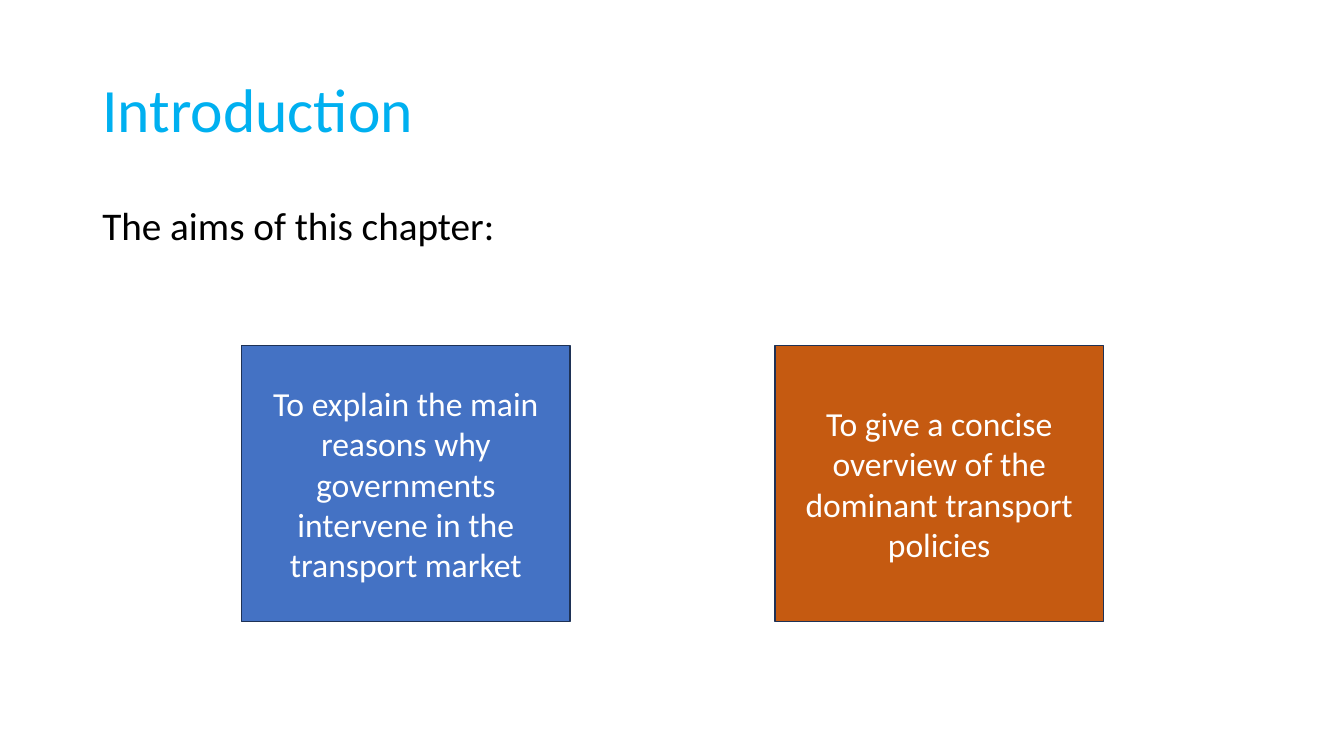
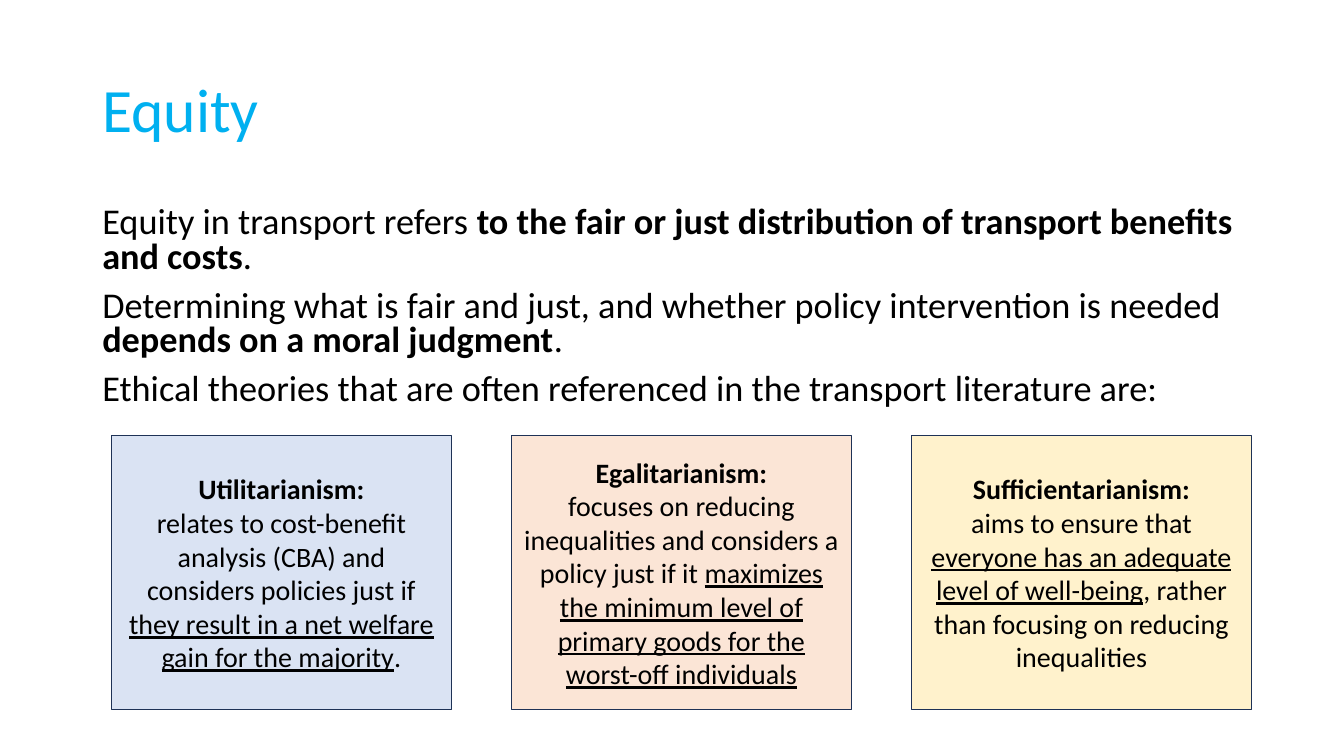
from pptx import Presentation
from pptx import util as u
from pptx.dml.color import RGBColor
from pptx.enum import shapes, text

EMU_PER_PX = 9525
FONT = "Calibri"
BLACK = RGBColor(0x00, 0x00, 0x00)
WHITE = RGBColor(0xFF, 0xFF, 0xFF)
SKY = RGBColor(0x00, 0xB0, 0xF0)
NAVY = RGBColor(0x1E, 0x32, 0x56)
BLUE = RGBColor(0x44, 0x72, 0xC4)
RUST = RGBColor(0xC5, 0x5A, 0x11)
PALE_BLUE = RGBColor(0xDA, 0xE3, 0xF3)
PALE_ORANGE = RGBColor(0xFB, 0xE5, 0xD6)
PALE_YELLOW = RGBColor(0xFF, 0xF2, 0xCC)

MARGIN, CONTENT_WIDTH = 88, 1104
BOLD, UNDERLINE = "bold", "underline"


def px(*lengths):
    return [u.Emu(length * EMU_PER_PX) for length in lengths]


class Deck:
    def __init__(self):
        self.presentation = Presentation()
        self.presentation.slide_width, self.presentation.slide_height = px(1280, 720)
        self.slide = None

    def add_slide(self, title):
        self.slide = self.presentation.slides.add_slide(self.presentation.slide_layouts[6])
        self.text_box(38, 139, [[title]], 44, SKY, anchor=text.MSO_ANCHOR.MIDDLE)

    def fill_text(self, frame, paragraphs, size, color, align, spacing=1.0, gap=0):
        """Fill a frame; a paragraph is a list of strings or (string, style) pairs."""
        frame.word_wrap = True
        for index, pieces in enumerate(paragraphs):
            paragraph = frame.add_paragraph() if index else frame.paragraphs[0]
            paragraph.alignment = align
            paragraph.line_spacing = spacing
            paragraph.space_before = u.Pt(gap if index else 0)
            font = paragraph.font
            font.name, font.size = FONT, u.Pt(size)
            font.color.rgb = color
            for piece in pieces:
                words, style = (piece, None) if isinstance(piece, str) else piece
                run = paragraph.add_run()
                run.text = words
                if style == BOLD:
                    run.font.bold = True
                elif style == UNDERLINE:
                    run.font.underline = True

    def text_box(self, top, height, paragraphs, size, color=BLACK, spacing=0.9,
                 anchor=text.MSO_ANCHOR.TOP):
        shape = self.slide.shapes.add_textbox(*px(MARGIN, top, CONTENT_WIDTH, height))
        shape.text_frame.vertical_anchor = anchor
        self.fill_text(shape.text_frame, paragraphs, size, color,
                       text.PP_ALIGN.LEFT, spacing, gap=10)

    def card(self, left, top, width, height, fill, paragraphs, size, color):
        shape = self.slide.shapes.add_shape(
            shapes.MSO_SHAPE.RECTANGLE, *px(left, top, width, height))
        shape.shadow.inherit = False
        shape.fill.solid()
        shape.fill.fore_color.rgb = fill
        shape.line.color.rgb = NAVY
        shape.line.width = u.Pt(1)
        shape.text_frame.vertical_anchor = text.MSO_ANCHOR.MIDDLE
        self.fill_text(shape.text_frame, paragraphs, size, color, text.PP_ALIGN.CENTER)

    def card_row(self, left, top, width, height, step, cards, size, color):
        for index, (fill, paragraphs) in enumerate(cards):
            self.card(left + index * step, top, width, height, fill, paragraphs, size, color)


def introduction(deck):
    deck.add_slide("Introduction")
    deck.text_box(192, 457, [["The aims of this chapter:"]], 28)
    aims = [
        (BLUE, [["To explain the main reasons why governments intervene "
                 "in the transport market"]]),
        (RUST, [["To give a concise overview of the dominant transport policies"]]),
    ]
    deck.card_row(230, 329, 313, 263, 508, aims, 24, WHITE)


def equity(deck):
    deck.add_slide("Equity")
    deck.text_box(192, 209, [
        ["Equity in transport refers ",
         ("to the fair or just distribution of transport benefits and costs", BOLD), "."],
        ["Determining what is fair and just, and whether policy intervention is needed ",
         ("depends on a moral judgment", BOLD), "."],
        ["Ethical theories that are often referenced in the transport literature are:"],
    ], 25.9, spacing=0.8)
    theories = [
        (PALE_BLUE, [
            [("Utilitarianism:", BOLD)],
            ["relates to cost-benefit analysis (CBA) and considers policies just if ",
             ("they result in a net welfare gain for the majority", UNDERLINE), "."]]),
        (PALE_ORANGE, [
            [("Egalitarianism:", BOLD)],
            ["focuses on reducing inequalities and considers a policy just if it ",
             ("maximizes the minimum level of primary goods for the worst-off individuals",
              UNDERLINE)]]),
        (PALE_YELLOW, [
            [("Sufficientarianism:", BOLD)],
            ["aims to ensure that ",
             ("everyone has an adequate level of well-being", UNDERLINE),
             ", rather than focusing on reducing inequalities"]]),
    ]
    deck.card_row(106, 415, 324, 261, 381, theories, 20, BLACK)


def main():
    deck = Deck()
    introduction(deck)
    equity(deck)
    deck.presentation.save("out.pptx")


if __name__ == "__main__":
    main()
